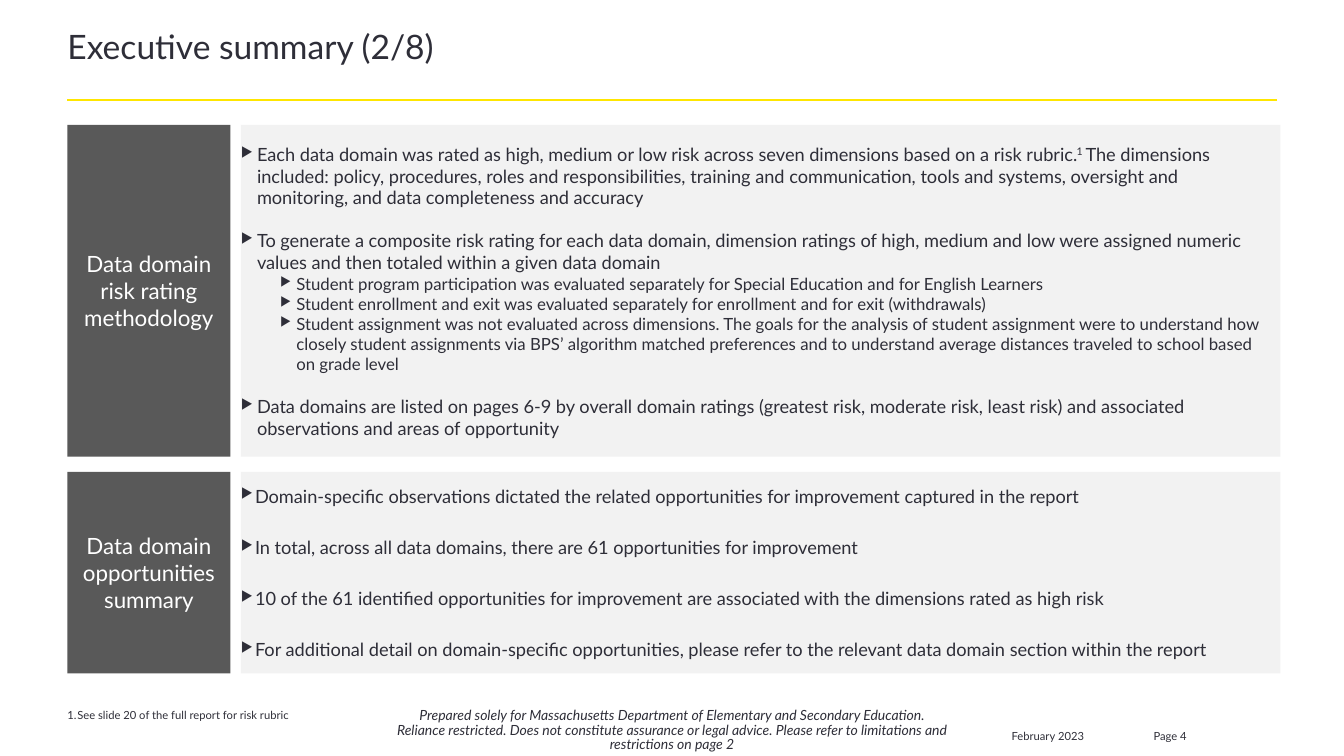
from lxml import etree
from pptx import Presentation
from pptx.dml.color import RGBColor
from pptx.enum.shapes import MSO_CONNECTOR, MSO_SHAPE
from pptx.enum.text import MSO_ANCHOR, PP_ALIGN
from pptx.oxml.ns import qn
from pptx.util import Cm, Pt

RECTANGLE = MSO_SHAPE.RECTANGLE
STRAIGHT = MSO_CONNECTOR.STRAIGHT
TOP, MIDDLE, BOTTOM = MSO_ANCHOR.TOP, MSO_ANCHOR.MIDDLE, MSO_ANCHOR.BOTTOM
LEFT, CENTER = PP_ALIGN.LEFT, PP_ALIGN.CENTER

FONT = "Lato"
INK, WHITE, YELLOW = "2E2E38", "FFFFFF", "FFE600"
LABEL_GRAY, PANEL_GRAY = "595959", "F2F2F2"
LEFT_EDGE, LABEL_WIDTH, PANEL_GAP, PANEL_WIDTH = 1.7, 4.11, 0.26, 26.21
INSET_SIDE, INSET_TOP = 0.25, 0.13

METHODOLOGY = [
    (0, 15, ["Each data domain was rated as high, medium or low risk across seven dimensions "
             "based on a risk rubric.", "1 ",
             "The dimensions included: policy, procedures, roles and responsibilities, training and "
             "communication, tools and systems, oversight and monitoring, and data completeness "
             "and accuracy"]),
    (0, 0, ["To generate a composite risk rating for each data domain, dimension ratings of high, "
            "medium and low were assigned numeric values and then totaled within a given data domain"]),
    (1, 0, ["Student program participation was evaluated separately for Special Education "
            "and for English Learners"]),
    (1, 0, ["Student enrollment and exit was evaluated separately for enrollment "
            "and for exit (withdrawals)"]),
    (1, 15, ["Student assignment was not evaluated across dimensions. The goals for the analysis of "
             "student assignment were to understand how closely student assignments via BPS’ "
             "algorithm matched preferences and to understand average distances traveled to school "
             "based on grade level"]),
    (0, 0, ["Data domains are listed on pages 6-9 by overall domain ratings (greatest risk, moderate "
            "risk, least risk) and associated observations and areas of opportunity"]),
]
OPPORTUNITIES = [
    "Domain-specific observations dictated the related opportunities for improvement captured in the report",
    "In total, across all data domains, there are 61 opportunities for improvement",
    "10 of the 61 identified opportunities for improvement are associated with the dimensions rated as high risk",
    "For additional detail on domain-specific opportunities, please refer to the relevant data domain "
    "section within the report",
]


def color(value):
    return RGBColor.from_string(value)


def set_frame(frame, anchor, insets):
    frame.word_wrap = True
    frame.vertical_anchor = anchor
    frame.margin_left, frame.margin_top, frame.margin_right, frame.margin_bottom = map(Cm, insets)


def add_run(paragraph, text, size, fill=INK, italic=False, superscript=False):
    run = paragraph.add_run()
    run.text = text
    run.font.name = FONT
    run.font.size = Pt(size)
    run.font.italic = italic
    run.font.color.rgb = color(fill)
    if superscript:
        run.font._element.set("baseline", "30000")


def set_indent(paragraph, left, hanging):
    properties = paragraph._p.get_or_add_pPr()
    properties.set("marL", str(Cm(left)))
    properties.set("indent", str(-Cm(hanging)))
    return properties


def add_bullet(paragraph, left, hanging):
    properties = set_indent(paragraph, left, hanging)
    etree.SubElement(properties, qn("a:buSzPct")).set("val", "75000")
    etree.SubElement(properties, qn("a:buChar")).set("char", "▶")


def add_rectangle(slide, left, top, width, height, fill):
    shape = slide.shapes.add_shape(RECTANGLE, Cm(left), Cm(top), Cm(width), Cm(height))
    shape.shadow.inherit = False
    shape.fill.solid()
    shape.fill.fore_color.rgb = color(fill)
    shape.line.fill.background()
    return shape


def add_text(slide, left, top, width, height, text, size, anchor=TOP,
             insets=(0, 0, 0, 0), align=LEFT, italic=False):
    box = slide.shapes.add_textbox(Cm(left), Cm(top), Cm(width), Cm(height))
    set_frame(box.text_frame, anchor, insets)
    paragraph = box.text_frame.paragraphs[0]
    paragraph.alignment = align
    add_run(paragraph, text, size, italic=italic)
    return paragraph


def add_header(slide, left, top, width):
    title = add_text(slide, left, top, width, 1.65, "Executive summary (2/8)", 24)
    title.line_spacing = 0.85
    rule_top = Cm(top + 1.71)
    rule = slide.shapes.add_connector(STRAIGHT, Cm(left), rule_top, Cm(left + width), rule_top)
    rule.line.color.rgb = color(YELLOW)
    rule.line.width = Pt(1.5)
    etree.SubElement(rule._element.spPr, qn("a:effectLst"))


def add_section(slide, top, height, label, fill_panel):
    label_box = add_rectangle(slide, LEFT_EDGE, top, LABEL_WIDTH, height, LABEL_GRAY)
    set_frame(label_box.text_frame, MIDDLE, (INSET_SIDE, INSET_TOP, INSET_SIDE, INSET_TOP))
    paragraph = label_box.text_frame.paragraphs[0]
    paragraph.alignment = CENTER
    add_run(paragraph, label, 16, WHITE)
    panel_left = LEFT_EDGE + LABEL_WIDTH + PANEL_GAP
    panel = add_rectangle(slide, panel_left, top, PANEL_WIDTH, height, PANEL_GRAY)
    set_frame(panel.text_frame, MIDDLE, (0, 0, INSET_SIDE, 0))
    fill_panel(panel.text_frame)


def next_paragraph(frame, index):
    paragraph = frame.add_paragraph() if index else frame.paragraphs[0]
    paragraph.alignment = LEFT
    return paragraph


def fill_methodology(frame):
    for index, (level, space_after, texts) in enumerate(METHODOLOGY):
        paragraph = next_paragraph(frame, index)
        paragraph.level = level
        add_bullet(paragraph, 1.4 if level else 0.41, 0.41)
        paragraph.space_after = Pt(space_after)
        for position, text in enumerate(texts):
            add_run(paragraph, text, 12 if level else 13, superscript=position == 1)


def fill_opportunities(frame):
    for index, text in enumerate(OPPORTUNITIES):
        paragraph = next_paragraph(frame, index)
        add_bullet(paragraph, 0.36, 0.36)
        if index:
            paragraph.space_before = Pt(21)
        add_run(paragraph, text, 13)


def add_footer(slide, left, top):
    note = add_text(slide, left, top, 8.23, 1.12,
                    "See slide 20 of the full report for risk rubric", 8, BOTTOM)
    properties = set_indent(note, 0.25, 0.25)
    etree.SubElement(properties, qn("a:buAutoNum")).set("type", "arabicPeriod")
    disclaimer = add_text(
        slide, left + 8.23, top + 0.71, 14.02, 1.19,
        "Prepared solely for Massachusetts Department of Elementary and Secondary Education. "
        "Reliance restricted. Does not constitute assurance or legal advice. Please refer to "
        "limitations and restrictions on page 2", 10, TOP, (0, 0.1, 0, 0), CENTER, True)
    disclaimer.line_spacing = 0.85
    for offset, width, text in [(23.55, 3.3, "February 2023"), (27.13, 1.85, "Page 4")]:
        add_text(slide, left + offset, top + 1.17, width, 0.51, text, 8, TOP,
                 (INSET_SIDE, INSET_TOP, INSET_SIDE, INSET_TOP))


def main():
    presentation = Presentation()
    presentation.slide_width, presentation.slide_height = Cm(33.88), Cm(19.05)
    slide = presentation.slides.add_slide(presentation.slide_layouts[6])
    add_header(slide, LEFT_EDGE, 0.81, 30.48)
    add_section(slide, 3.15, 8.36, "Data domain risk rating methodology", fill_methodology)
    add_section(slide, 11.89, 5.08, "Data domain opportunities summary", fill_opportunities)
    add_footer(slide, LEFT_EDGE, 17.07)
    presentation.save("out.pptx")


if __name__ == "__main__":
    main()
